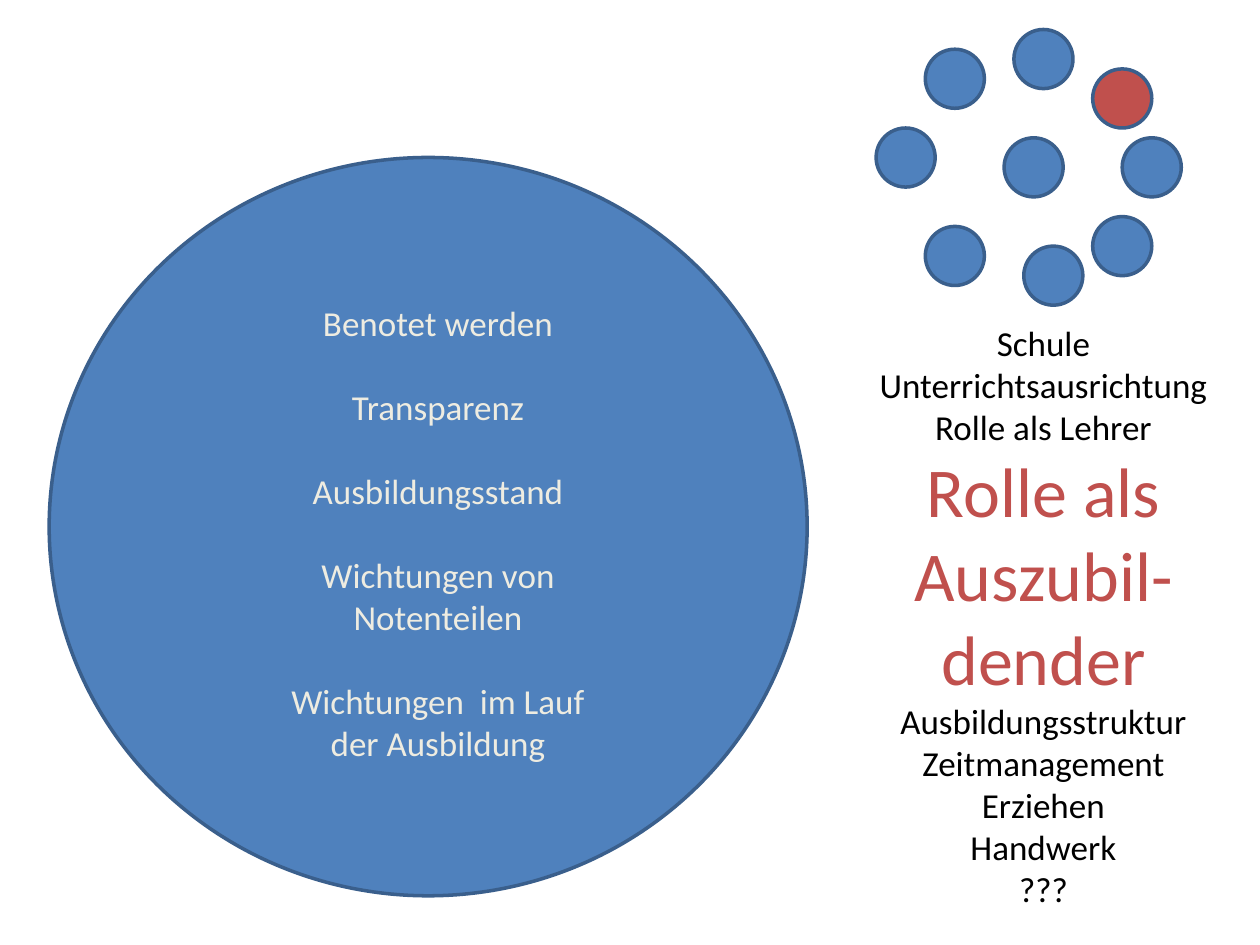
import pptx
import pptx.util
from pptx.dml.color import RGBColor
from pptx.enum.shapes import MSO_SHAPE
from pptx.enum.text import MSO_AUTO_SIZE, PP_ALIGN

HUES = {"blue": "4F81BD", "edge": "3A5F8C", "red": "C0504D",
        "cream": "EEECE1", "black": "000000"}
FONT = "Calibri"
WIDE, HIGH = 10, 7.5
COLS = 128  # square cells, so the slide has 96 rows
CELL = WIDE / COLS

# Boxes are left, top, width, height in grid cells.
DISC = (5, 16, 77, 75)
TOPICS_BOX = (28, 30, 33, 48.6)
TOPICS = [
    "Benotet werden",
    "Transparenz",
    "Ausbildungsstand",
    "Wichtungen von Notenteilen",
    "Wichtungen  im Lauf der Ausbildung",
]
ROLES_BOX = (88, 32, 36, 65.5)
ROLES = [
    "Schule",
    "Unterrichtsausrichtung",
    "Rolle als Lehrer",
    "Rolle als Auszubil-dender",
    "Ausbildungsstruktur",
    "Zeitmanagement",
    "Erziehen",
    "Handwerk",
    "???",
]
FOCUS = 3  # the role set large and red
DOT = 6
DOTS = [  # column, row, colour
    (102, 14, "blue"), (94, 5, "blue"), (89, 13, "blue"),
    (94, 23, "blue"), (104, 25, "blue"), (111, 22, "blue"),
    (114, 14, "blue"), (111, 7, "red"), (103, 3, "blue"),
]


def place(box):
    return [pptx.util.Inches(n * CELL) for n in box]


def rgb(hue):
    return RGBColor.from_string(HUES[hue])


def add_disc(slide, box, hue):
    disc = slide.shapes.add_shape(MSO_SHAPE.OVAL, *place(box))
    disc.shadow.inherit = False
    disc.fill.solid()
    disc.fill.fore_color.rgb = rgb(hue)
    disc.line.color.rgb = rgb("edge")
    disc.line.width = pptx.util.Pt(2)


def add_list(slide, box, rows, gap=0):
    """Add centred rows of (text, size, hue), gap points apart."""
    frame = slide.shapes.add_textbox(*place(box)).text_frame
    frame.word_wrap = True
    frame.auto_size = MSO_AUTO_SIZE.SHAPE_TO_FIT_TEXT
    for i, (text, size, hue) in enumerate(rows):
        para = frame.add_paragraph() if i else frame.paragraphs[0]
        para.text = text
        para.alignment = PP_ALIGN.CENTER
        para.font.name = FONT
        para.font.size = pptx.util.Pt(size)
        para.font.color.rgb = rgb(hue)
        if i and gap:
            para.space_before = pptx.util.Pt(gap)


def main():
    deck = pptx.Presentation()
    deck.slide_width = pptx.util.Inches(WIDE)
    deck.slide_height = pptx.util.Inches(HIGH)
    slide = deck.slides.add_slide(deck.slide_layouts[6])

    add_disc(slide, DISC, "blue")
    add_list(slide, TOPICS_BOX, [(t, 20, "cream") for t in TOPICS], gap=24)
    add_list(slide, ROLES_BOX,
             [(t, 40, "red") if i == FOCUS else (t, 20, "black")
              for i, t in enumerate(ROLES)])
    for col, row, hue in DOTS:
        add_disc(slide, (col, row, DOT, DOT), hue)

    deck.save("out.pptx")


if __name__ == "__main__":
    main()
